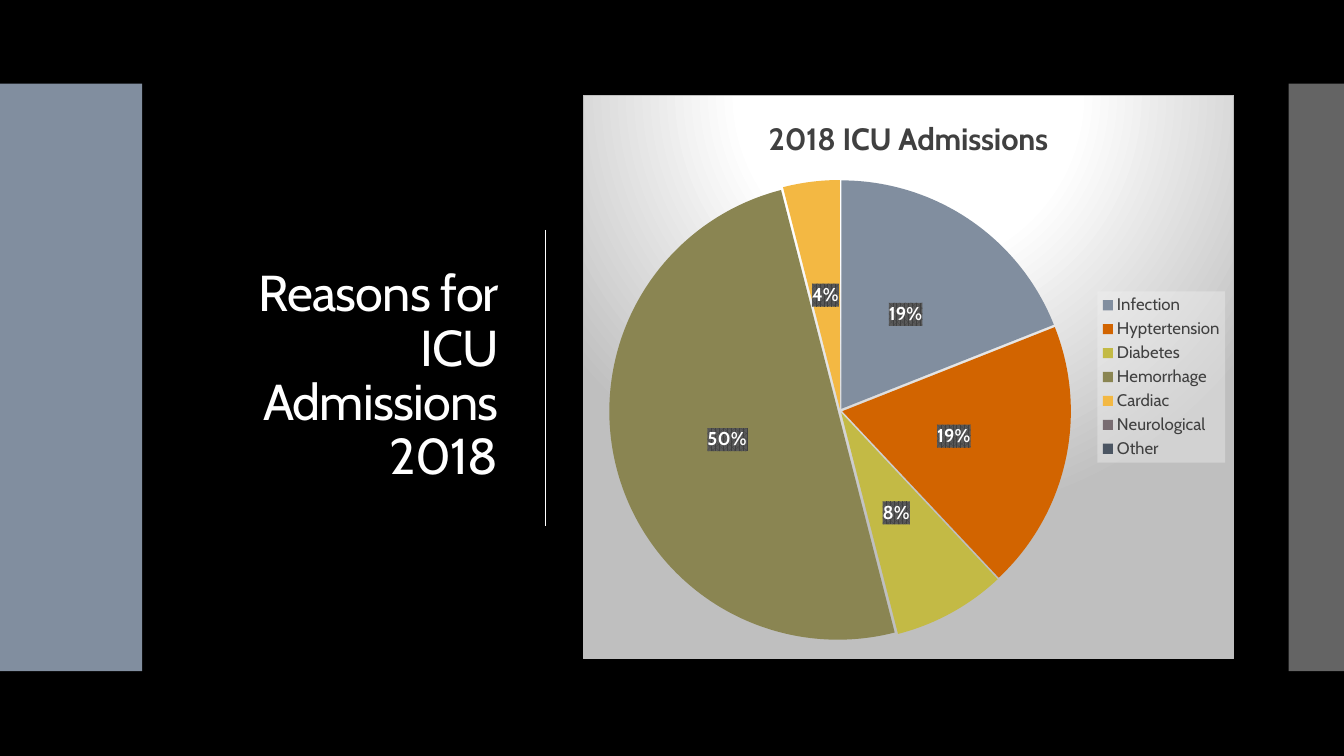
from pptx import Presentation
from pptx.chart.data import CategoryChartData
from pptx.dml.color import RGBColor
from pptx.enum import chart as charts, shapes, text
from pptx.oxml import parse_xml
from pptx.oxml.ns import qn
from pptx.util import Inches, Pt

FONT = "Cabin"
BLACK = RGBColor(0x00, 0x00, 0x00)
WHITE = RGBColor(0xFF, 0xFF, 0xFF)
SLATE = RGBColor(0x81, 0x8E, 0x9F)
GREY = RGBColor(0x64, 0x64, 0x64)
CHARCOAL = RGBColor(0x40, 0x40, 0x40)
NAMESPACES = ('xmlns:c="http://schemas.openxmlformats.org/drawingml/2006/chart" '
              'xmlns:a="http://schemas.openxmlformats.org/drawingml/2006/main"')
REASONS = [
    ("Infection", 19, SLATE),
    ("Hyptertension", 19, RGBColor(0xD2, 0x64, 0x00)),
    ("Diabetes", 8, RGBColor(0xC3, 0xBA, 0x45)),
    ("Hemorrhage", 50, RGBColor(0x8A, 0x85, 0x52)),
    ("Cardiac", 4, RGBColor(0xF3, 0xB8, 0x43)),
    ("Neurological", 0, RGBColor(0x78, 0x6C, 0x71)),
    ("Other", None, RGBColor(0x4B, 0x55, 0x62)),
]


def chart_xml(tag, body):
    return parse_xml(f"<c:{tag} {NAMESPACES}>{body}</c:{tag}>")


def style_font(font, size, color, bold=False):
    font.name = FONT
    font.size = Pt(size)
    font.bold = bold
    font.color.rgb = color


prs = Presentation()
prs.slide_width = Inches(13.33)
prs.slide_height = Inches(7.5)
slide = prs.slides.add_slide(prs.slide_layouts[6])
slide.background.fill.solid()
slide.background.fill.fore_color.rgb = BLACK

# Side bands
for left, width, color in [(0, 1.41, SLATE), (12.78, 0.55, GREY)]:
    band = slide.shapes.add_shape(shapes.MSO_SHAPE.RECTANGLE, Inches(left),
                                  Inches(0.83), Inches(width), Inches(5.83))
    band.shadow.inherit = False
    band.fill.solid()
    band.fill.fore_color.rgb = color
    band.line.fill.background()

# Heading and divider
heading = slide.shapes.add_textbox(Inches(1.68), Inches(0.94), Inches(3.36), Inches(5.6))
heading.text_frame.word_wrap = True
heading.text_frame.vertical_anchor = text.MSO_ANCHOR.MIDDLE
heading_line = heading.text_frame.paragraphs[0]
heading_line.text = "Reasons for ICU Admissions\v2018"
heading_line.alignment = text.PP_ALIGN.RIGHT
heading_line.line_spacing = 0.9
for run in heading_line.runs:
    style_font(run.font, 36, WHITE)
    run.font._element.set("spc", "-60")

divider = slide.shapes.add_connector(shapes.MSO_CONNECTOR.STRAIGHT, Inches(5.41),
                                     Inches(2.28), Inches(5.41), Inches(5.22))
divider.line.color.rgb = WHITE
divider.line.width = Pt(1)
divider._element.spPr.append(parse_xml(f"<a:effectLst {NAMESPACES}/>"))

# Admissions pie
admissions = CategoryChartData()
admissions.categories = [reason for reason, _, _ in REASONS]
admissions.add_series("2018 ICU Admissions", [share for _, share, _ in REASONS])
pie = slide.shapes.add_chart(charts.XL_CHART_TYPE.PIE, Inches(5.78), Inches(0.94),
                             Inches(6.46), Inches(5.6), admissions).chart
style_font(pie.font, 10, WHITE)

pie.has_title = True
pie_title = pie.chart_title.text_frame
pie_title.text = "2018 ICU Admissions"
style_font(pie_title.paragraphs[0].runs[0].font, 22, CHARCOAL, bold=True)

pie.has_legend = True
pie.legend.position = charts.XL_LEGEND_POSITION.RIGHT
pie.legend.include_in_layout = False
style_font(pie.legend.font, 12, CHARCOAL)

plot = pie.plots[0]
plot.vary_by_categories = True
series = plot.series[0]
for index, (_, _, color) in enumerate(REASONS):
    slice_fill = series.points[index].format.fill
    slice_fill.solid()
    slice_fill.fore_color.rgb = color
series._element.find(qn("c:tx")).addnext(parse_xml(f'<c:explosion {NAMESPACES} val="1"/>'))

labels = series.data_labels
labels.show_percentage = True
labels.show_value = False
labels.number_format = "0%"
labels.number_format_is_linked = False
labels.position = charts.XL_LABEL_POSITION.CENTER
style_font(labels.font, 13.3, WHITE, bold=True)
for index, (_, share, _) in reversed(list(enumerate(REASONS))):
    if not share:
        labels._element.insert(0, chart_xml(
            "dLbl", f'<c:idx val="{index}"/><c:delete val="1"/>'))

# Backgrounds of the chart, its legend and its labels
backgrounds = [
    (pie._chartSpace,
     '<a:gradFill><a:gsLst>'
     '<a:gs pos="0"><a:srgbClr val="FFFFFF"/></a:gs>'
     '<a:gs pos="39000"><a:srgbClr val="FFFFFF"/></a:gs>'
     '<a:gs pos="100000"><a:srgbClr val="BFBFBF"/></a:gs></a:gsLst>'
     '<a:path path="circle"><a:fillToRect l="50000" t="-80000" r="50000" b="180000"/></a:path>'
     '</a:gradFill><a:ln w="9525"><a:solidFill><a:srgbClr val="BFBFBF"/></a:solidFill></a:ln>'),
    (pie.legend._element,
     '<a:solidFill><a:srgbClr val="F2F2F2"><a:alpha val="39000"/></a:srgbClr></a:solidFill>'),
    (labels._element,
     '<a:pattFill prst="pct75"><a:fgClr><a:srgbClr val="404040"/></a:fgClr>'
     '<a:bgClr><a:srgbClr val="595959"/></a:bgClr></a:pattFill>'),
]
for owner, fill in backgrounds:
    owner.find(qn("c:txPr")).addprevious(chart_xml("spPr", fill))

plot_area = pie._chartSpace.chart.plotArea
for layout in plot_area.findall(qn("c:layout")):
    plot_area.remove(layout)
plot_area.insert(0, chart_xml(
    "layout",
    '<c:manualLayout><c:layoutTarget val="inner"/>'
    '<c:xMode val="edge"/><c:yMode val="edge"/>'
    '<c:x val="0.04"/><c:y val="0.15"/><c:w val="0.71"/><c:h val="0.82"/>'
    '</c:manualLayout>'))

prs.save("out.pptx")
